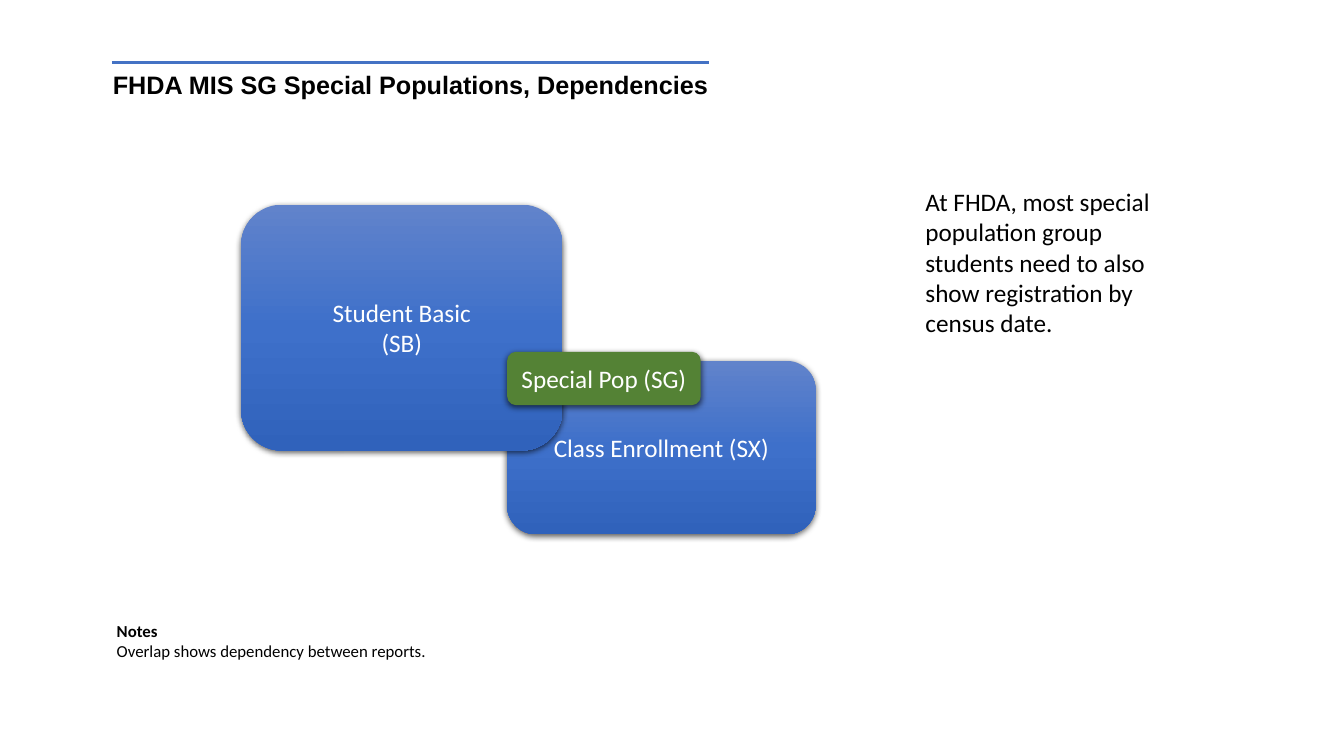
"""Builds the slide on the report dependencies of special populations."""
from copy import deepcopy
from dataclasses import dataclass

from pptx import Presentation
from pptx.dml.color import RGBColor
from pptx.enum.shapes import MSO_CONNECTOR, MSO_SHAPE
from pptx.enum.text import MSO_ANCHOR, PP_ALIGN
from pptx.oxml import parse_xml
from pptx.oxml.ns import nsdecls, qn
from pptx.util import Inches, Pt


@dataclass(frozen=True)
class Theme:
    """Holds the colours, fonts and type sizes."""
    text: str = "000000"
    on_box: str = "FFFFFF"
    rule: str = "4472C4"
    green: str = "548235"
    blues: tuple = ("6183CB", "3E70CA", "3062BB")
    heading_font: str = "Arial"
    body_font: str = "Calibri"
    body_size: int = 18
    note_size: int = 12


THEME = Theme()


def add_span(para, text, color=THEME.text, size=THEME.body_size,
             font=THEME.body_font, bold=False):
    """Adds one formatted run to a paragraph."""
    span = para.add_run()
    span.text = text
    span.font.name = font
    span.font.size = Pt(size)
    span.font.bold = bold
    span.font.color.rgb = RGBColor.from_string(color)


def add_paragraphs(frame, count):
    """Returns the given number of paragraphs, starting with the first."""
    return [frame.paragraphs[0]] + [frame.add_paragraph() for _ in range(count - 1)]


def add_text(page, left, top, width, height, lines, **style):
    """Adds a wrapping text box from pairs of text and boldness."""
    box = page.shapes.add_textbox(
        Inches(left), Inches(top), Inches(width), Inches(height))
    box.text_frame.word_wrap = True
    paras = add_paragraphs(box.text_frame, len(lines))
    for para, (text, bold) in zip(paras, lines):
        add_span(para, text, bold=bold, **style)


def fill_gradient(box, colors):
    """Fills a box with evenly spaced colours from top to bottom."""
    box.fill.gradient()
    box.fill.gradient_angle = 270
    stop_list = box.fill.gradient_stops
    stops = box._element.spPr.find(qn("a:gradFill")).find(qn("a:gsLst"))
    for _ in range(len(colors) - len(stop_list)):
        stops.append(deepcopy(stops[0]))
    for index, (stop, color) in enumerate(zip(box.fill.gradient_stops, colors)):
        stop.position = index / (len(colors) - 1)
        stop.color.rgb = RGBColor.from_string(color)


def add_shadow(box):
    """Gives a box a soft shadow below it."""
    box.shadow.inherit = False
    box._element.spPr.find(qn("a:effectLst")).append(parse_xml(
        f'<a:outerShdw {nsdecls("a")} blurRad="{Pt(4.5)}" dist="{Pt(1.5)}" '
        'dir="5400000" algn="ctr" rotWithShape="0"><a:srgbClr val="000000">'
        '<a:alpha val="63000"/></a:srgbClr></a:outerShdw>'))


def add_report(page, left, top, width, height, lines, colors):
    """Adds a rounded report box with centred lines of text."""
    box = page.shapes.add_shape(
        MSO_SHAPE.ROUNDED_RECTANGLE,
        Inches(left), Inches(top), Inches(width), Inches(height))
    if len(colors) > 1:
        fill_gradient(box, colors)
    else:
        box.fill.solid()
        box.fill.fore_color.rgb = RGBColor.from_string(colors[0])
    box.line.fill.background()
    add_shadow(box)
    frame = box.text_frame
    frame.word_wrap = True
    frame.vertical_anchor = MSO_ANCHOR.MIDDLE
    for para, text in zip(add_paragraphs(frame, len(lines)), lines):
        para.alignment = PP_ALIGN.CENTER
        add_span(para, text, color=THEME.on_box)


def add_rule(page, left, right, top):
    """Adds the horizontal rule above the heading."""
    rule = page.shapes.add_connector(
        MSO_CONNECTOR.STRAIGHT,
        Inches(left), Inches(top), Inches(right), Inches(top))
    rule.line.color.rgb = RGBColor.from_string(THEME.rule)
    rule.line.width = Pt(2.25)
    rule._element.spPr.append(parse_xml(f'<a:effectLst {nsdecls("a")}/>'))


def main():
    """Builds and saves the deck."""
    deck = Presentation()
    deck.slide_width, deck.slide_height = Inches(13.33), Inches(7.5)
    page = deck.slides.add_slide(deck.slide_layouts[6])

    add_report(page, 5.03, 3.58, 3.06, 1.72, ["Class Enrollment (SX)"], THEME.blues)
    add_report(page, 2.39, 2.03, 3.19, 2.44, ["Student Basic", "(SB)"], THEME.blues)
    add_report(page, 5.03, 3.49, 1.92, 0.53, ["Special Pop (SG)"], (THEME.green,))

    add_text(page, 1.02, 0.64, 7.55, 0.4,
             [("FHDA MIS SG Special Populations, Dependencies", True)],
             font=THEME.heading_font)
    add_rule(page, 1.11, 7.03, 0.62)
    add_text(page, 1.06, 6.11, 6.33, 0.5,
             [("Notes", True), ("Overlap shows dependency between reports.", False)],
             size=THEME.note_size)
    add_text(page, 9.08, 1.8, 2.75, 1.62,
             [("At FHDA, most special population group students need to also "
               "show registration by census date.", False)])
    deck.save("out.pptx")


if __name__ == "__main__":
    main()
